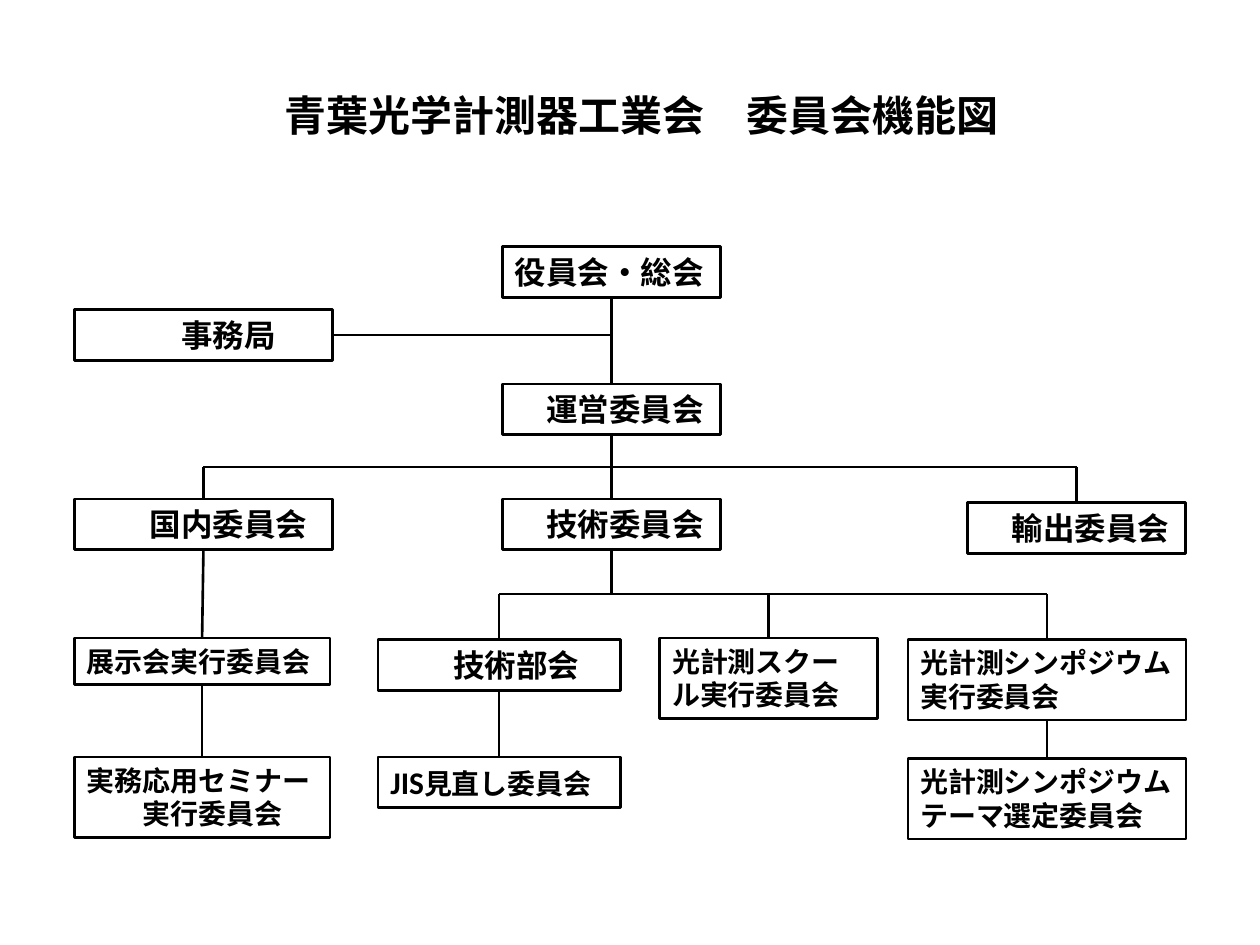
from dataclasses import dataclass

from lxml import etree
from pptx import Presentation
from pptx.dml.color import RGBColor
from pptx.enum.shapes import MSO_CONNECTOR, MSO_SHAPE
from pptx.enum.text import MSO_ANCHOR, MSO_AUTO_SIZE, PP_ALIGN
from pptx.oxml.ns import qn
from pptx.util import Pt

BLACK = RGBColor(0x00, 0x00, 0x00)
FONT = "Calibri"
LINE_WIDTH = 1.5
RECTANGLE = MSO_SHAPE.RECTANGLE
STRAIGHT = MSO_CONNECTOR.STRAIGHT
TOP, MIDDLE = MSO_ANCHOR.TOP, MSO_ANCHOR.MIDDLE
LEFT, CENTER = PP_ALIGN.LEFT, PP_ALIGN.CENTER
GROW = MSO_AUTO_SIZE.SHAPE_TO_FIT_TEXT

# Box heights in points: one large line, one small line, two small lines
LARGE, SMALL, DOUBLE = 29, 26.6, 46


@dataclass(frozen=True)
class Label:
    text: str
    size: float = 18
    indent: int = 0  # in full-width characters
    prefix: str = ""  # leading letters, always 18 pt


@dataclass(frozen=True)
class Box:
    left: float
    top: float
    width: float
    height: float
    labels: tuple[Label, ...]

    @property
    def center(self) -> float:
        return self.left + self.width / 2

    @property
    def bottom(self) -> float:
        return self.top + self.height


def style_font(font, size: float) -> None:
    font.name = FONT
    font.size = Pt(size)
    font.bold = True
    font.color.rgb = BLACK


def draw_box(slide, box: Box) -> None:
    shape = slide.shapes.add_shape(
        RECTANGLE, Pt(box.left), Pt(box.top), Pt(box.width), Pt(box.height))
    shape.shadow.inherit = False
    shape.fill.background()
    shape.line.color.rgb = BLACK
    shape.line.width = Pt(LINE_WIDTH)
    frame = shape.text_frame
    frame.word_wrap = True
    frame.auto_size = GROW
    frame.vertical_anchor = TOP
    for number, label in enumerate(box.labels):
        paragraph = frame.add_paragraph() if number else frame.paragraphs[0]
        paragraph.alignment = LEFT
        style_font(paragraph.font, label.size)
        if label.indent:
            margin = Pt(label.indent * label.size)
            paragraph._p.get_or_add_pPr().set("marL", str(int(margin)))
        if label.prefix:
            prefix = paragraph.add_run()
            prefix.text = label.prefix
            style_font(prefix.font, 18)
        body = paragraph.add_run()
        body.text = label.text
        style_font(body.font, label.size)


def draw_line(slide, x1: float, y1: float, x2: float, y2: float) -> None:
    line = slide.shapes.add_connector(STRAIGHT, Pt(x1), Pt(y1), Pt(x2), Pt(y2))
    line.line.color.rgb = BLACK
    line.line.width = Pt(LINE_WIDTH)
    etree.SubElement(line._element.spPr, qn("a:effectLst"))


def draw_link(slide, parent: Box, child: Box) -> None:
    draw_line(slide, parent.center, parent.bottom, child.center, child.top)


def draw_rail(slide, y: float, children: list[Box]) -> None:
    """Horizontal rail with a drop to each child."""
    centers = [child.center for child in children]
    draw_line(slide, min(centers), y, max(centers), y)
    for child in children:
        draw_line(slide, child.center, y, child.center, child.top)


def draw_title(slide, text: str) -> None:
    title = slide.shapes.add_textbox(Pt(42.5), Pt(33), Pt(648), Pt(70.5))
    frame = title.text_frame
    frame.word_wrap = True
    frame.vertical_anchor = MIDDLE
    paragraph = frame.paragraphs[0]
    paragraph.text = text
    paragraph.alignment = CENTER
    paragraph.line_spacing = Pt(23)
    style_font(paragraph.font, 24)


# Column edges and widths
DOMESTIC_X, MAIN_X, SECTION_X = 42.5, 287.2, 216
SCHOOL_X, SYMPOSIUM_X, EXPORT_X = 377, 518.8, 553
MAIN_W, SECTION_W, SYMPOSIUM_W = 124.5, 138.5, 159
OFFICE_W, EVENT_W = 147.5, 146

# Leadership
board = Box(MAIN_X, 141, MAIN_W, LARGE, (Label("役員会・総会"),))
office = Box(DOMESTIC_X, 177, OFFICE_W, LARGE, (Label("事務局", indent=3),))
steering = Box(MAIN_X, 219.5, MAIN_W, LARGE, (Label("運営委員会", indent=1),))

# Committees
domestic = Box(DOMESTIC_X, 285.2, OFFICE_W, LARGE,
               (Label("国内委員会", indent=2),))
technical = Box(MAIN_X, 285.2, MAIN_W, LARGE, (Label("技術委員会", indent=1),))
export = Box(EXPORT_X, 287.2, MAIN_W, LARGE, (Label("輸出委員会", indent=1),))

# Working groups
exhibition = Box(DOMESTIC_X, 364.5, EVENT_W, SMALL,
                 (Label("展示会実行委員会", 16),))
seminar = Box(DOMESTIC_X, 432.5, EVENT_W, DOUBLE,
              (Label("実務応用セミナー", 16), Label("実行委員会", 16, 2)))
section = Box(SECTION_X, 365.5, SECTION_W, LARGE,
              (Label("技術部会", indent=2),))
school = Box(SCHOOL_X, 364.5, MAIN_W, DOUBLE,
             (Label("光計測スクール実行委員会", 16),))
symposium = Box(SYMPOSIUM_X, 365.5, SYMPOSIUM_W, DOUBLE,
                (Label("光計測シンポジウム実行委員会", 16),))
review = Box(SECTION_X, 432.5, SECTION_W, LARGE,
             (Label("見直し委員会", 16, prefix="JIS"),))
themes = Box(SYMPOSIUM_X, 433.5, SYMPOSIUM_W, DOUBLE,
             (Label("光計測シンポジウムテーマ選定委員会", 16),))

BOXES = (board, office, steering, domestic, exhibition, seminar, technical,
         export, section, school, symposium, review, themes)
LINKS = ((board, steering), (steering, technical), (domestic, exhibition),
         (exhibition, seminar), (section, review), (symposium, themes))
COMMITTEE_RAIL_Y, GROUP_RAIL_Y = 266.8, 339.4


def main() -> None:
    presentation = Presentation()
    presentation.slide_width, presentation.slide_height = Pt(720), Pt(540)
    slide = presentation.slides.add_slide(presentation.slide_layouts[6])

    draw_title(slide, "青葉光学計測器工業会　委員会機能図")
    for box in BOXES:
        draw_box(slide, box)

    # Connections
    for parent, child in LINKS:
        draw_link(slide, parent, child)
    office_y = office.top + office.height / 2
    draw_line(slide, office.left + office.width, office_y,
              board.center, office_y)
    draw_rail(slide, COMMITTEE_RAIL_Y, [domestic, export])
    draw_line(slide, technical.center, technical.bottom,
              technical.center, GROUP_RAIL_Y)
    draw_rail(slide, GROUP_RAIL_Y, [section, school, symposium])

    presentation.save("out.pptx")


if __name__ == "__main__":
    main()
